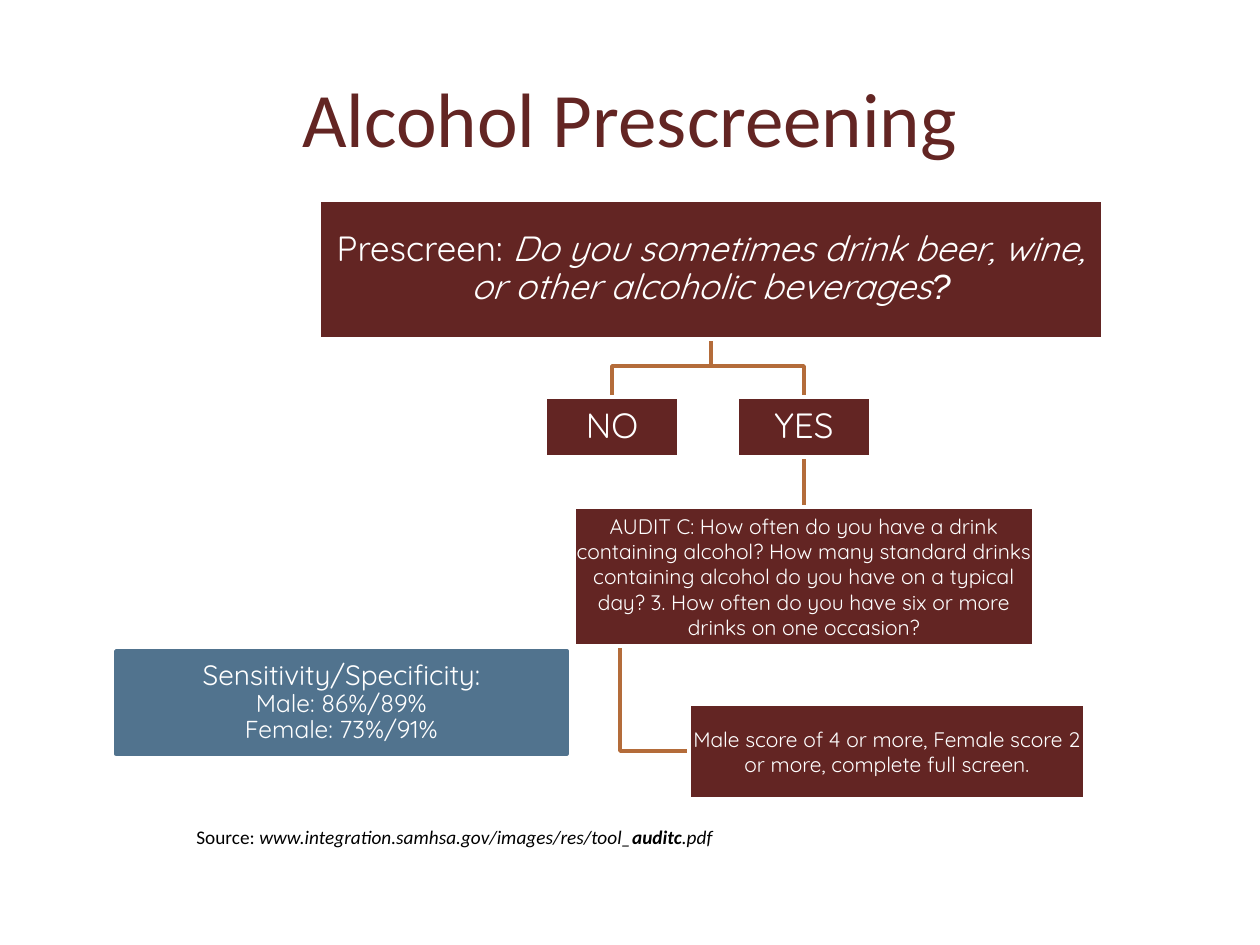
"""Build the alcohol prescreening decision-tree slide."""
from lxml import etree
from pptx import Presentation
from pptx.dml.color import RGBColor
from pptx.enum.shapes import MSO_CONNECTOR, MSO_SHAPE
from pptx.enum.text import MSO_ANCHOR, PP_ALIGN
from pptx.oxml.ns import qn
from pptx.util import Pt

RECTANGLE = MSO_SHAPE.RECTANGLE
STRAIGHT = MSO_CONNECTOR.STRAIGHT
MIDDLE = MSO_ANCHOR.MIDDLE
CENTER, LEFT = PP_ALIGN.CENTER, PP_ALIGN.LEFT
BOTTOM_SIDE, TOP_SIDE = 2, 0

MAROON = RGBColor(0x63, 0x25, 0x23)
BLUE = RGBColor(0x51, 0x73, 0x8E)
COPPER = RGBColor(0xB4, 0x6C, 0x3A)
WHITE = RGBColor(0xFF, 0xFF, 0xFF)
BLACK = RGBColor(0, 0, 0)

EMU_PER_PX = 914400 / 126
TITLE = "Alcohol Prescreening"
TITLE_PLACE = (0, 33, 1260, 168)

PRESCREEN = [
    ("Prescreen: ", {}),
    ("Do you sometimes drink beer, wine, or other alcoholic beverages", {"italic": True}),
    ("?", {"italic": True, "font": "Arial"}),
]
AUDIT = (
    "AUDIT C: How often do you have a drink containing alcohol? How many standard drinks "
    "containing alcohol do you have on a typical day? 3. How often do you have six or more "
    "drinks on one occasion?"
)
RESULT = "Male score of 4 or more, Female score 2 or more, complete full screen."
NODES = {
    "prescreen": ((319, 200, 784, 139), PRESCREEN, 20, 0.9),
    "no": ((545, 397, 134, 60), [("NO", {})], 20, 0.9),
    "yes": ((737, 397, 134, 60), [("YES", {})], 20, 0.9),
    "audit": ((574, 507, 460, 139), [(AUDIT, {})], 12, 1),
    "result": ((689, 704, 396, 95), [(RESULT, {})], 12, 1),
}
ACCURACY_PLACE = (116, 651, 451, 103)
ACCURACY = [
    [("Sensitivity/Specificity:", {"size": 16})],
    [("Male: 86%/89%", {"size": 14})],
    [("Female: 73%/91%", {"size": 14})],
]
SOURCE_PLACE = (184, 819, 858, 37)
SOURCE = [
    ("Source: ", {}),
    ("www.integration.samhsa.gov/images/res/tool_", {"italic": True}),
    ("auditc", {"italic": True, "bold": True}),
    (".pdf", {"italic": True}),
]


def px(length):
    return round(length * EMU_PER_PX)


def write(frame, paragraphs, size=12, font="Quicksand", color=WHITE, align=CENTER,
          spacing=1, before=0, inset=None, anchor=MIDDLE):
    frame.word_wrap = True
    frame.vertical_anchor = anchor
    if inset is not None:
        frame.margin_left = frame.margin_right = px(inset)
        frame.margin_top = frame.margin_bottom = px(inset)
    for index, spans in enumerate(paragraphs):
        para = frame.add_paragraph() if index else frame.paragraphs[0]
        para.alignment = align
        para.line_spacing = spacing
        para.space_before = Pt(before)
        for text, style in spans:
            span = para.add_run()
            span.text = text
            span.font.name = style.get("font", font)
            span.font.size = Pt(style.get("size", size))
            span.font.italic = style.get("italic", False)
            span.font.bold = style.get("bold", False)
            span.font.color.rgb = color


def add_box(page, place, fill, outline):
    box = page.shapes.add_shape(RECTANGLE, *map(px, place))
    box.shadow.inherit = False
    box.fill.solid()
    box.fill.fore_color.rgb = fill
    box.line.color.rgb = outline
    box.line.width = Pt(2)
    return box


def style_branch(branch):
    branch.line.color.rgb = COPPER
    branch.line.width = Pt(2)


def add_elbow(page, start, *corners):
    builder = page.shapes.build_freeform(*start, scale=EMU_PER_PX)
    builder.add_line_segments(corners, close=False)
    elbow = builder.convert_to_shape()
    elbow.fill.background()
    elbow.shadow.inherit = False
    style_branch(elbow)


def add_branches(page):
    left, top, width, height = NODES["prescreen"][0]
    start_x, start_y = left + width // 2, top + height
    for name in ("yes", "no"):
        child_left, child_top, child_width, _ = NODES[name][0]
        child_x = child_left + child_width // 2
        turn_y = child_top - 31
        add_elbow(page, (start_x, start_y), (start_x, turn_y),
                  (child_x, turn_y), (child_x, child_top))
    left, top, width, height = NODES["audit"][0]
    result_left, result_top, _, result_height = NODES["result"][0]
    stem_x, result_y = left + width // 10, result_top + result_height // 2
    add_elbow(page, (stem_x, top + height), (stem_x, result_y), (result_left, result_y))


def join_behind(page, upper, lower):
    branch = page.shapes.add_connector(STRAIGHT, 0, 0, 0, 0)
    branch.begin_connect(upper, BOTTOM_SIDE)
    branch.end_connect(lower, TOP_SIDE)
    style_branch(branch)
    etree.SubElement(branch.element.spPr, qn("a:effectLst"))
    upper.element.addprevious(branch.element)


def main():
    deck = Presentation()
    deck.slide_width, deck.slide_height = px(1260), px(945)
    page = deck.slides.add_slide(deck.slide_layouts[5])

    title = page.shapes.title
    title.left, title.top, title.width, title.height = map(px, TITLE_PLACE)
    write(title.text_frame, [[(TITLE, {})]], size=44, font="Calibri", color=MAROON)

    add_branches(page)
    boxes = {}
    for name, (place, spans, size, spacing) in NODES.items():
        boxes[name] = add_box(page, place, MAROON, WHITE)
        write(boxes[name].text_frame, [spans], size=size, spacing=spacing, inset=1)
    join_behind(page, boxes["yes"], boxes["audit"])

    accuracy = add_box(page, ACCURACY_PLACE, BLUE, BLUE)
    write(accuracy.text_frame, ACCURACY, spacing=0.9)

    source = page.shapes.add_textbox(*map(px, SOURCE_PLACE))
    write(source.text_frame, [SOURCE], size=11, font="Calibri", color=BLACK,
          align=LEFT, before=6, anchor=MSO_ANCHOR.TOP)
    deck.save("out.pptx")


if __name__ == "__main__":
    main()
